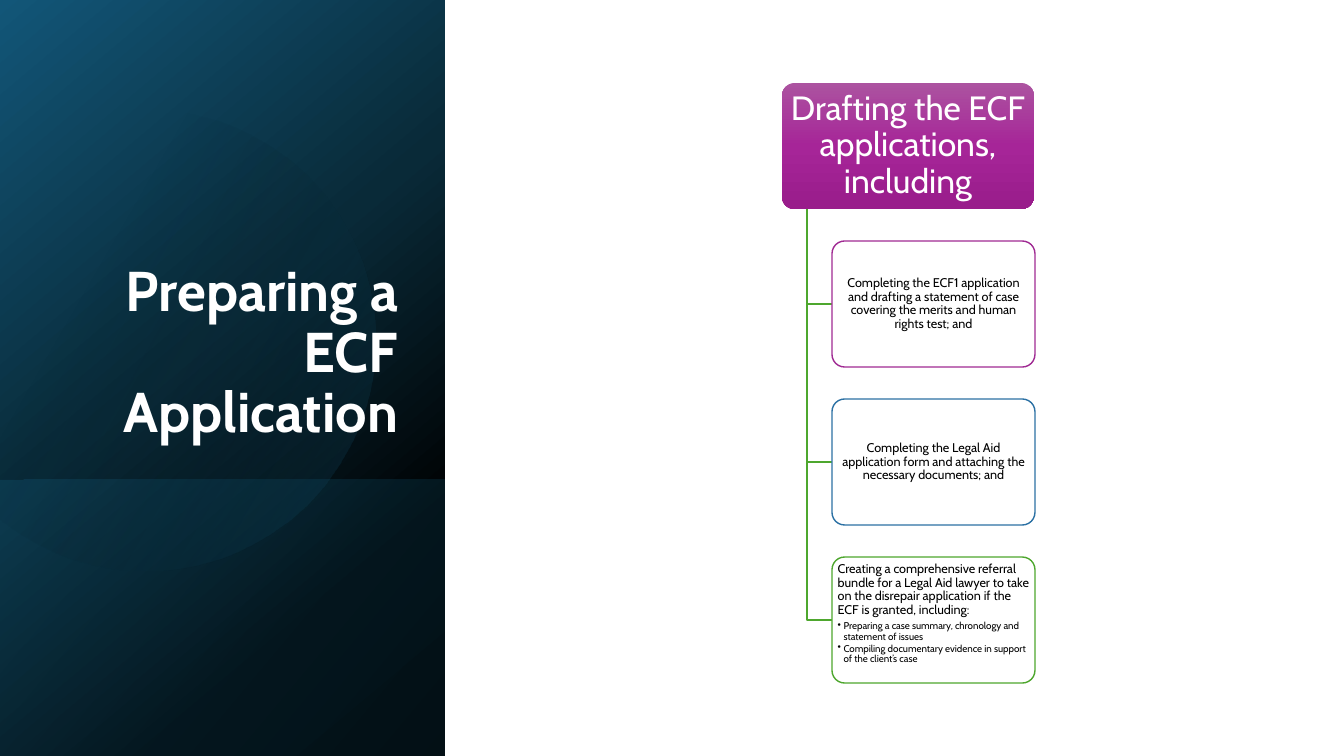
"""Build the slide on preparing an ECF application."""
import math

from pptx import Presentation
from pptx.dml.color import RGBColor
from pptx.enum.shapes import MSO_SHAPE
from pptx.enum.text import MSO_ANCHOR, MSO_AUTO_SIZE, PP_ALIGN
from pptx.oxml import parse_xml
from pptx.oxml.ns import nsdecls, qn
from pptx.util import Pt

PX = 914400 / 100.8
FONT = "Cabin"
RECT, ROUND = MSO_SHAPE.RECTANGLE, MSO_SHAPE.ROUNDED_RECTANGLE
LEFT, CENTER, RIGHT = PP_ALIGN.LEFT, PP_ALIGN.CENTER, PP_ALIGN.RIGHT
TOP, MIDDLE, BOTTOM = MSO_ANCHOR.TOP, MSO_ANCHOR.MIDDLE, MSO_ANCHOR.BOTTOM
PANEL_W, PANEL_H, OVERLAY_Y = 445, 756, 480
HEAD_X, HEAD_Y, HEAD_W, BOX_H = 782, 83, 252, 126
BOX_X, BOX_W, STEP, SPINE_X = 832, 203, 158, 807
GREEN = "4EA72E"
HEADING = "Drafting the ECF applications, including"
ITEMS = [
    ("A02B93", CENTER, MIDDLE,
     "Completing the ECF1 application and drafting a statement of case "
     "covering the merits and human rights test; and", []),
    ("2C71A4", CENTER, MIDDLE,
     "Completing the Legal Aid application form and attaching the "
     "necessary documents; and", []),
    (GREEN, LEFT, TOP,
     "Creating a comprehensive referral bundle for a Legal Aid lawyer to "
     "take on the disrepair application if the ECF is granted, including:",
     ["Preparing a case summary, chronology and statement of issues",
      "Compiling documentary evidence in support of the client’s case"]),
]


def px(n):
    """Convert pixels to EMU."""
    return round(n * PX)


def rgb(color):
    """Turn a hex string into a colour."""
    return RGBColor.from_string(color)


def set_gradient(s, angle, stops):
    """Fill a shape with (position, colour, opacity) stops, all in percent."""
    gs = "".join(
        f'<a:gs pos="{pos * 1000}"><a:srgbClr val="{color}">'
        f'<a:alpha val="{alpha * 1000}"/></a:srgbClr></a:gs>'
        for pos, color, alpha in stops)
    s.fill.background()
    sp_pr = s._element.spPr
    sp_pr.replace(sp_pr.find(qn("a:noFill")), parse_xml(
        f'<a:gradFill rotWithShape="1" {nsdecls("a")}><a:gsLst>{gs}</a:gsLst>'
        f'<a:lin ang="{angle * 60000}" scaled="0"/></a:gradFill>'))


def set_line(s, color=None):
    """Give a shape a thin outline or none, and no shadow."""
    s.shadow.inherit = False
    if color:
        s.line.color.rgb = rgb(color)
        s.line.width = Pt(1)
    else:
        s.line.fill.background()


def add_box(slide, kind, x, y, w, h, line=None):
    """Add a preset shape."""
    s = slide.shapes.add_shape(kind, px(x), px(y), px(w), px(h))
    set_line(s, line)
    if kind == ROUND:
        s.adjustments[0] = 0.1
    return s


def add_path(slide, points, close, line=None):
    """Add an outline through the given points."""
    builder = slide.shapes.build_freeform(*points[0], scale=PX)
    builder.add_line_segments(points[1:], close=close)
    s = builder.convert_to_shape()
    set_line(s, line)
    return s


def set_frame(s, anchor, inset_x, inset_y):
    """Set the anchor and margins of a text frame."""
    tf = s.text_frame
    tf.word_wrap = True
    tf.auto_size = MSO_AUTO_SIZE.NONE
    tf.vertical_anchor = anchor
    tf.margin_left = tf.margin_right = px(inset_x)
    tf.margin_top = tf.margin_bottom = px(inset_y)
    return tf


def set_text(p, text, size, color, align, after=0, bold=False):
    """Write and format one paragraph."""
    p.text = text
    p.alignment = align
    p.line_spacing = 0.9
    p.space_before = Pt(0)
    p.space_after = Pt(after)
    p.font.name = FONT
    p.font.size = Pt(size)
    p.font.bold = bold
    p.font.color.rgb = rgb(color)


def set_bullet(p, indent):
    """Hang a paragraph on a bullet."""
    p_pr = p._p.get_or_add_pPr()
    p_pr.set("marL", str(px(indent)))
    p_pr.set("indent", str(-px(indent)))
    bullet = parse_xml(f'<a:buChar char="•" {nsdecls("a")}/>')
    p_pr.insert_element_before(bullet, "a:tabLst", "a:defRPr", "a:extLst")


def add_panel(slide):
    """Draw the dark panel with its circle and lower overlay."""
    s = add_box(slide, RECT, 0, 0, PANEL_W, PANEL_H)
    set_gradient(s, 50, [(0, "125678", 100), (45, "092A38", 100),
                         (78, "000203", 100), (100, "000000", 100)])
    s = add_box(slide, RECT, 0, OVERLAY_Y, PANEL_W, PANEL_H - OVERLAY_Y)
    set_gradient(s, 40, [(0, "156082", 30), (100, "0A3547", 30)])
    cx, cy, radius = 145, 340, 230
    angles = [math.radians(a) for a in range(-129, 130, 3)]
    arc = [(cx + radius * math.cos(a), cy + radius * math.sin(a))
           for a in angles]
    s = add_path(slide, arc, True)
    set_gradient(s, 30, [(29, "000000", 0), (100, "156082", 28)])


def add_title(slide):
    """Place the title over the panel."""
    s = slide.shapes.title
    s.left, s.top, s.width, s.height = px(64), px(186), px(344), px(264)
    tf = set_frame(s, BOTTOM, 10, 5)
    set_text(tf.paragraphs[0], "Preparing a ECF Application", 40, "FFFFFF",
             RIGHT, bold=True)
    slide.shapes._spTree.append(s._element)


def add_heading(slide):
    """Draw the head of the hierarchy."""
    s = add_box(slide, ROUND, HEAD_X, HEAD_Y, HEAD_W, BOX_H)
    set_gradient(s, 90, [(0, "AC53A0", 100), (50, "A62598", 100),
                         (100, "991C8B", 100)])
    tf = set_frame(s, MIDDLE, 3, 3)
    set_text(tf.paragraphs[0], HEADING, 24, "FFFFFF", CENTER)


def add_item(slide, y, color, align, anchor, text, bullets):
    """Draw one item and the elbow line that leads to it."""
    elbow = [(SPINE_X, HEAD_Y + BOX_H), (SPINE_X, y + BOX_H // 2),
             (BOX_X, y + BOX_H // 2)]
    add_path(slide, elbow, False, GREEN).fill.background()
    s = add_box(slide, ROUND, BOX_X, y, BOX_W, BOX_H, color)
    s.fill.solid()
    s.fill.fore_color.rgb = rgb("FFFFFF")
    tf = set_frame(s, anchor, 2, 2)
    set_text(tf.paragraphs[0], text, 9, "000000", align, 3)
    for bullet in bullets:
        p = tf.add_paragraph()
        set_text(p, bullet, 7, "000000", align, 1)
        p.level = 1
        set_bullet(p, 6)


def main():
    """Build and save the slide."""
    prs = Presentation()
    prs.slide_width, prs.slide_height = px(1344), px(756)
    slide = prs.slides.add_slide(prs.slide_layouts[5])
    add_panel(slide)
    add_title(slide)
    add_heading(slide)
    for i, item in enumerate(ITEMS, 1):
        add_item(slide, HEAD_Y + i * STEP, *item)
    prs.save("out.pptx")


if __name__ == "__main__":
    main()
